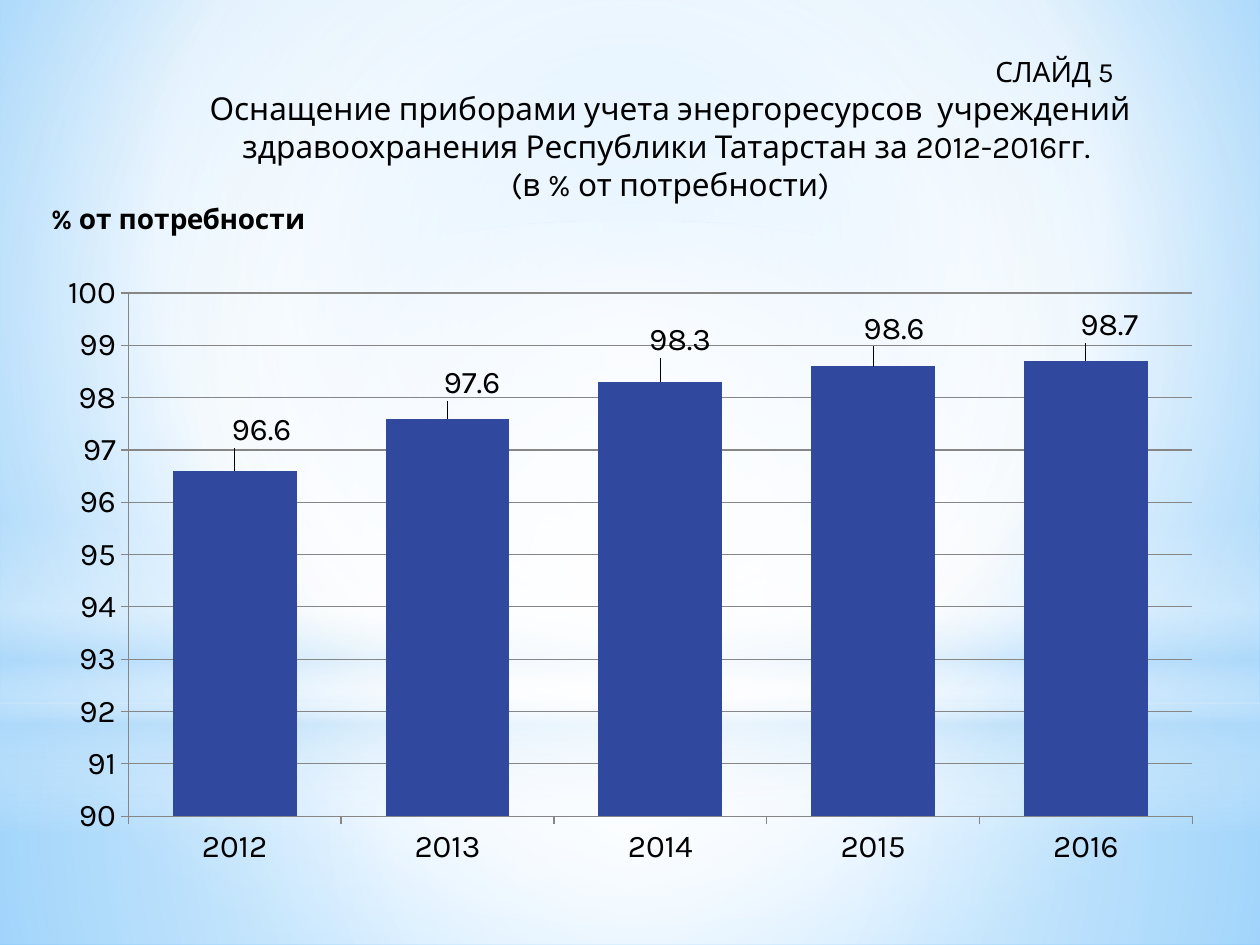
from dataclasses import dataclass
from pptx import Presentation
from pptx.chart.data import CategoryChartData
from pptx.dml.color import RGBColor
from pptx.enum.chart import XL_CHART_TYPE, XL_LABEL_POSITION, XL_TICK_MARK
from pptx.enum.shapes import MSO_SHAPE
from pptx.enum.text import MSO_ANCHOR, MSO_AUTO_SIZE, PP_ALIGN
from pptx.oxml import parse_xml
from pptx.oxml.ns import nsdecls, qn
from pptx.util import Inches, Pt

RECT, OVAL = MSO_SHAPE.RECTANGLE, MSO_SHAPE.OVAL
COLUMN = XL_CHART_TYPE.COLUMN_CLUSTERED
OUT_END = XL_LABEL_POSITION.OUTSIDE_END
TICK_OUT = XL_TICK_MARK.OUTSIDE
CENTER = PP_ALIGN.CENTER


@dataclass(frozen=True)
class Theme:
    font: str = "Karla"
    ink: str = "000000"
    bar: str = "31489F"
    grid: str = "868686"
    white: str = "FFFFFF"
    pale: str = "B4DCFA"
    sky: str = "9ED5FF"
    deep: str = "5BB9FF"
    text: int = 18
    small: int = 16


@dataclass(frozen=True)
class Grad:
    stops: tuple  # (position %, colour, opacity %)
    focus: tuple | None = (50, 50, 50, 50)  # None means top to bottom


@dataclass(frozen=True)
class Glow:
    kind: MSO_SHAPE
    top: float
    height: float
    grad: Grad


@dataclass(frozen=True)
class Line:
    text: str
    size: int
    indent: float = 0
    after: int = 0


@dataclass(frozen=True)
class Bar:
    year: str
    share: float
    shift: tuple  # label offset, % of the chart


THEME = Theme()
W, P = THEME.white, THEME.pale
BACK = Grad(((0, THEME.sky, 100), (60, W, 100), (100, THEME.deep, 100)),
            (20, 10, 20, 60))
GLOWS = (
    Glow(RECT, 5.58, 1.92, Grad(((0, W, 91), (37, W, 76), (100, P, 79)))),
    Glow(RECT, 0, 5.58, Grad(((0, W, 89), (48, W, 62), (100, P, 79)))),
    Glow(RECT, 4.12, 2.5, Grad(((0, W, 0), (29, W, 30), (45, P, 40),
                                (55, W, 26), (65, P, 60), (100, W, 0)), None)),
    Glow(OVAL, 1.75, 5.58, Grad(((0, W, 100), (56, W, 0)))),
)
TITLE = (
    Line("СЛАЙД 5", THEME.small, 6.1, 1),
    Line("Оснащение приборами учета энергоресурсов  учреждений здравоохранения "
         "Республики Татарстан за 2012-2016гг. ", THEME.text),
    Line("(в % от потребности)", THEME.text),
)
UNIT = "% от потребности"
BARS = (
    Bar("2012", 96.6, (2.3, -2.6)),
    Bar("2013", 97.6, (2.1, -1.8)),
    Bar("2014", 98.3, (1.7, -2.7)),
    Bar("2015", 98.6, (1.8, -2.1)),
    Bar("2016", 98.7, (2, -1.8)),
)


def style(font, size: int, bold: bool = False) -> None:
    font.name, font.size, font.bold = THEME.font, Pt(size), bold
    font.color.rgb = RGBColor.from_string(THEME.ink)


def blend(fill, root, grad: Grad) -> None:
    """Swap the solid fill found under root for a gradient."""
    fill.solid()
    stops = "".join(
        f'<a:gs pos="{pos * 1000}"><a:srgbClr val="{color}">'
        f'<a:alpha val="{alpha * 1000}"/></a:srgbClr></a:gs>'
        for pos, color, alpha in grad.stops)
    if grad.focus:
        sides = " ".join(f'{side}="{part * 1000}"'
                         for side, part in zip("ltrb", grad.focus))
        way = f'<a:path path="circle"><a:fillToRect {sides}/></a:path>'
    else:
        way = '<a:lin ang="5400000" scaled="0"/>'
    solid = root.find(".//" + qn("a:solidFill"))
    solid.getparent().replace(solid, parse_xml(
        f'<a:gradFill {nsdecls("a")} rotWithShape="1">'
        f'<a:gsLst>{stops}</a:gsLst>{way}</a:gradFill>'))


def place(host, index: int, spot: tuple, size: tuple = (),
          edge: bool = True) -> None:
    """Give a chart part a manual layout, in % of the chart."""
    for old in host.findall(qn("c:layout")):
        host.remove(old)
    parts = [("layoutTarget", "inner")] if size else []
    if edge:
        parts += [("xMode", "edge"), ("yMode", "edge")]
    parts += [(tag, val / 100) for tag, val in zip("xywh", spot + size)]
    body = "".join(f'<c:{tag} val="{val}"/>' for tag, val in parts)
    host.insert(index, parse_xml(
        f'<c:layout {nsdecls("c")}><c:manualLayout>{body}'
        '</c:manualLayout></c:layout>'))


def drop_leaders(labels) -> None:
    labels.append(parse_xml(
        f'<c:extLst {nsdecls("c")}>'
        '<c:ext uri="{CE6537A1-D6FC-4f65-9D91-7224C49458BB}" xmlns:c15='
        '"http://schemas.microsoft.com/office/drawing/2012/chart">'
        '<c15:showLeaderLines val="0"/></c:ext></c:extLst>'))


def add_glow(slide, glow: Glow) -> None:
    shape = slide.shapes.add_shape(glow.kind, 0, Inches(glow.top),
                                   Inches(10), Inches(glow.height))
    shape.shadow.inherit = False
    shape.line.fill.background()
    blend(shape.fill, shape.element, glow.grad)


def fill_title(slide) -> None:
    title = slide.shapes.title
    title.left, title.top = Inches(0.91), Inches(0.36)
    title.width, title.height = Inches(8.82), Inches(1.3)
    title.element.getparent().append(title.element)
    frame = title.text_frame
    frame.text = "\n".join(line.text for line in TITLE)
    frame.word_wrap, frame.auto_size = True, MSO_AUTO_SIZE.NONE
    frame.vertical_anchor = MSO_ANCHOR.BOTTOM
    for para, line in zip(frame.paragraphs, TITLE):
        para.alignment = CENTER
        para.space_after = Pt(line.after)
        style(para.runs[0].font, line.size)
        props = para._p.get_or_add_pPr()
        props.set("marL", str(Inches(line.indent)))
        props.set("indent", "0")


def add_bars(slide) -> None:
    data = CategoryChartData()
    data.categories = [bar.year for bar in BARS]
    data.add_series(UNIT, [bar.share for bar in BARS])
    chart = slide.shapes.add_chart(COLUMN, Inches(0.35), Inches(1.53),
                                   Inches(9.29), Inches(5.45), data).chart
    style(chart.font, THEME.text)
    chart.has_legend = False

    frame = chart.chart_title.text_frame
    frame.text = UNIT
    style(frame.paragraphs[0].runs[0].font, THEME.small, True)
    chart.chart_title.include_in_layout = False
    place(chart.chart_title._element, 1, (0.15, 0.45))
    place(chart._chartSpace.chart.plotArea, 0, (7.2, 14.6), (90.9, 76.2))

    scale = chart.value_axis
    scale.minimum_scale, scale.maximum_scale, scale.major_unit = 90, 100, 1
    scale.has_major_gridlines = True
    lines = [scale.major_gridlines.format.line]
    for axis in (scale, chart.category_axis):
        axis.major_tick_mark = TICK_OUT
        lines.append(axis.format.line)
    for line in lines:
        line.color.rgb = RGBColor.from_string(THEME.grid)
        line.width = Pt(0.75)

    plot = chart.plots[0]
    plot.vary_by_categories = False
    plot.gap_width, plot.overlap = 72, -100
    series = plot.series[0]
    series.format.fill.solid()
    series.format.fill.fore_color.rgb = RGBColor.from_string(THEME.bar)
    series.data_labels.show_value = True
    for index in range(len(BARS)):
        label = series.points[index].data_label
        style(label.font, THEME.text)
        label.position = OUT_END
    labels = series.data_labels._element
    for mark, bar in zip(labels.findall(qn("c:dLbl")), BARS):
        place(mark, 1, bar.shift, edge=False)
    drop_leaders(labels)


def main() -> None:
    deck = Presentation()
    deck.slide_width, deck.slide_height = Inches(10), Inches(7.5)
    slide = deck.slides.add_slide(deck.slide_layouts[5])
    blend(slide.background.fill, slide.element, BACK)
    for glow in GLOWS:
        add_glow(slide, glow)
    fill_title(slide)
    add_bars(slide)
    deck.save("out.pptx")


if __name__ == "__main__":
    main()
